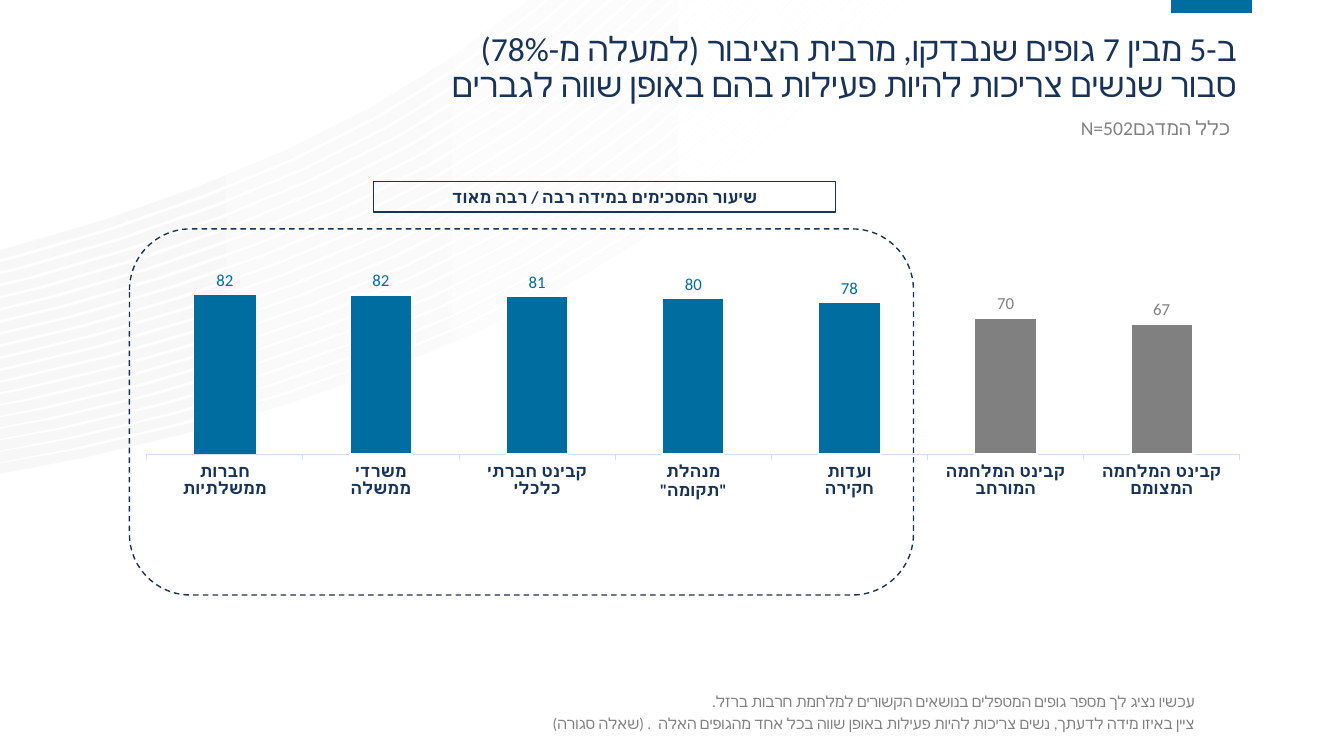
from dataclasses import dataclass

from lxml import etree
from pptx import Presentation
from pptx import util as u
from pptx.chart import data as chart_data
from pptx.dml import color
from pptx.enum import chart as chart_kinds, dml, shapes, text
from pptx.oxml import ns

FONT = "Calibri"
NAVY, BLUE, GRAY, WHITE = "183359", "006DA1", "808080", "FFFFFF"
Point = tuple[float, float]


@dataclass
class Body:
    label: str
    share: int
    highlighted: bool


@dataclass
class Frame:
    kind: shapes.MSO_SHAPE
    left: float
    top: float
    width: float
    height: float
    line_width: float
    dash: dml.MSO_LINE | None = None


BODIES = [
    Body("חברות\nממשלתיות", 82, True),
    Body("משרדי\nממשלה", 82, True),
    Body("קבינט חברתי\nכלכלי", 81, True),
    Body("מנהלת\n\"תקומה\"", 80, True),
    Body("ועדות\nחקירה", 78, True),
    Body("קבינט המלחמה\nהמורחב", 70, False),
    Body("קבינט המלחמה\nהמצומם", 67, False),
]
CAPTION_FRAME = Frame(shapes.MSO_SHAPE.RECTANGLE, 267, 129.5, 330, 22, 0.75)
GROUP_FRAME = Frame(shapes.MSO_SHAPE.ROUNDED_RECTANGLE, 92.5, 163.5, 560, 261.5, 1, dml.MSO_LINE.DASH)

STRIPE_COUNT = 19
STRIPE_STEP = (-7.2, -6.95)
LOWER_EDGE = [(646, 0), (559, 88.5), (494.5, 150.5), (420.5, 201), (337, 238.5),
              (253.5, 276), (160.5, 305.5), (60, 327), (0, 338.5)]
UPPER_EDGE = [(636.5, 0), (554, 84), (490, 145.5), (417, 195), (334, 232.5),
              (251.5, 269.5), (158.5, 299.5), (59, 320.5), (0, 331)]


def rgb(value: str) -> color.RGBColor:
    return color.RGBColor.from_string(value)


def style_font(font, size: float, ink: str, bold: bool = False) -> None:
    font.name, font.size, font.bold = FONT, u.Pt(size), bold
    font.color.rgb = rgb(ink)


def style_line(line, ink: str, width: float) -> None:
    line.color.rgb = rgb(ink)
    line.width = u.Pt(width)


def place(shape, left: float, top: float, width: float, height: float) -> None:
    shape.left, shape.top = u.Pt(left), u.Pt(top)
    shape.width, shape.height = u.Pt(width), u.Pt(height)


def write(frame, words: str, *, size: float, ink: str, bold: bool = False,
          align=text.PP_ALIGN.RIGHT, anchor=text.MSO_ANCHOR.TOP,
          spacing=None, tab: float | None = None) -> None:
    frame.word_wrap = True
    frame.auto_size = text.MSO_AUTO_SIZE.NONE
    frame.vertical_anchor = anchor
    for index, paragraph_words in enumerate(words.split("\n")):
        para = frame.add_paragraph() if index else frame.paragraphs[0]
        properties = para._p.get_or_add_pPr()
        for name, value in (("rtl", "1"), ("marL", "0"), ("indent", "0")):
            properties.set(name, value)
        etree.SubElement(properties, ns.qn("a:buNone"))
        if tab:
            tabs = etree.SubElement(properties, ns.qn("a:tabLst"))
            etree.SubElement(tabs, ns.qn("a:tab"), pos=str(u.Pt(tab)), algn="l")
        para.alignment = align
        para.space_before = u.Pt(0)
        if spacing:
            para.line_spacing = spacing
        for row, row_words in enumerate(paragraph_words.split("\v")):
            if row:
                para.add_line_break()
            span = para.add_run()
            span.text = row_words
            style_font(span.font, size, ink, bold)
            etree.SubElement(span._r.get_or_add_rPr(), ns.qn("a:cs"), typeface=FONT)


def curve(nodes: list[Point], steps: int = 4) -> list[Point]:
    return [
        tuple((1 - t) ** 3 * a + 3 * (1 - t) ** 2 * t * b + 3 * (1 - t) * t ** 2 * c + t ** 3 * d
              for a, b, c, d in zip(*nodes))
        for t in (step / steps for step in range(steps + 1))
    ]


def edge(nodes: list[Point]) -> list[Point]:
    return [nodes[0], *curve(nodes[1:5]), *curve(nodes[4:8])[1:], nodes[8]]


def clip(points: list[Point], axis: int) -> list[Point]:
    kept = []
    for start, end in zip(points[-1:] + points[:-1], points):
        if (start[axis] < 0) != (end[axis] < 0):
            t = start[axis] / (start[axis] - end[axis])
            kept.append(tuple(a + t * (b - a) for a, b in zip(start, end)))
        if end[axis] >= 0:
            kept.append(end)
    return kept


def draw_stripes(page) -> None:
    outline = edge(LOWER_EDGE) + edge(UPPER_EDGE)[::-1]
    builder = None
    for index in range(STRIPE_COUNT):
        shifted = [(x + index * STRIPE_STEP[0], y + index * STRIPE_STEP[1]) for x, y in outline]
        first, *rest = [(u.Pt(x), u.Pt(y)) for x, y in clip(clip(shifted, 0), 1)]
        if builder is None:
            builder = page.shapes.build_freeform(*first)
        else:
            builder.move_to(*first)
        builder.add_line_segments(rest, close=True)
    stripes = builder.convert_to_shape()
    stripes.shadow.inherit = False
    stripes.line.fill.background()
    stripes.fill.gradient()
    stripes.fill.gradient_angle = 0
    for stop, ink, position in zip(stripes.fill.gradient_stops, ("F7F7F7", WHITE), (0, 1)):
        stop.color.rgb = rgb(ink)
        stop.position = position
    stripes._element.getparent().insert(2, stripes._element)


def draw_accent(page) -> None:
    accent = page.shapes.add_connector(
        shapes.MSO_CONNECTOR.STRAIGHT, u.Pt(836.5), u.Pt(4.5), u.Pt(894), u.Pt(4.5))
    style_line(accent.line, BLUE, 10)
    etree.SubElement(accent._element.spPr, ns.qn("a:effectLst"))


def draw_frame(page, item: Frame):
    box = page.shapes.add_shape(
        item.kind, u.Pt(item.left), u.Pt(item.top), u.Pt(item.width), u.Pt(item.height))
    box.shadow.inherit = False
    box.fill.background()
    style_line(box.line, NAVY, item.line_width)
    if item.dash:
        box.line.dash_style = item.dash
    return box


def draw_chart(page) -> None:
    table = chart_data.CategoryChartData()
    table.categories = [body.label for body in BODIES]
    table.add_series("Series 1", [body.share for body in BODIES])
    chart = page.shapes.add_chart(
        chart_kinds.XL_CHART_TYPE.COLUMN_CLUSTERED,
        u.Pt(80), u.Pt(154), u.Pt(828), u.Pt(268), table).chart
    chart.has_legend = chart.has_title = False
    style_font(chart.font, 10, NAVY)
    axis = chart.category_axis
    axis.major_tick_mark = chart_kinds.XL_TICK_MARK.OUTSIDE
    style_font(axis.tick_labels.font, 12, NAVY, True)
    style_line(axis.format.line, "D0DEF2", 0.75)
    scale = chart.value_axis
    scale.minimum_scale, scale.maximum_scale = 0, 100
    scale.has_major_gridlines = scale.visible = False

    plot = chart.plots[0]
    plot.gap_width, plot.vary_by_categories = 150, False
    bars = plot.series[0]
    bars.format.fill.solid()
    bars.format.fill.fore_color.rgb = rgb(GRAY)
    style_line(bars.format.line, WHITE, 1.5)
    labels = bars.data_labels
    labels.show_value = True
    labels.position = chart_kinds.XL_LABEL_POSITION.OUTSIDE_END
    style_font(labels.font, 12, GRAY)
    for index, body in enumerate(BODIES):
        if body.highlighted:
            bar = bars.points[index]
            bar.format.fill.solid()
            bar.format.fill.fore_color.rgb = rgb(BLUE)
            if index:
                style_line(bar.format.line, WHITE, 1.5)
            else:
                bar.format.line.fill.background()
            style_font(bar.data_label.font, 12, BLUE)
            bar.data_label.position = chart_kinds.XL_LABEL_POSITION.OUTSIDE_END

    area = chart._chartSpace.chart.plotArea
    for old in area.findall(ns.qn("c:layout")):
        area.remove(old)
    layout = etree.Element(ns.qn("c:layout"))
    area.insert(0, layout)
    manual = etree.SubElement(layout, ns.qn("c:manualLayout"))
    for name, value in (("layoutTarget", "inner"), ("xMode", "edge"), ("yMode", "edge"),
                        ("x", "0.03"), ("y", "0.117"), ("w", "0.943"), ("h", "0.519")):
        etree.SubElement(manual, ns.qn(f"c:{name}"), val=value)


def main() -> None:
    deck = Presentation()
    deck.slide_width, deck.slide_height = u.Pt(960), u.Pt(540)
    page = deck.slides.add_slide(deck.slide_layouts[1])
    draw_stripes(page)
    draw_accent(page)
    title, note = page.shapes.title, page.placeholders[1]
    place(title, 62.5, 19.5, 828, 56)
    write(title.text_frame, "ב-5 מבין 7 גופים שנבדקו, מרבית הציבור (למעלה מ-78%)\v"
          "סבור שנשים צריכות להיות פעילות בהם באופן שווה לגברים", size=24, ink=NAVY, spacing=0.9)
    place(note, 92, 487.5, 769, 39.5)
    write(note.text_frame, "עכשיו נציג לך מספר גופים המטפלים בנושאים הקשורים למלחמת חרבות ברזל.\n"
          "ציין באיזו מידה לדעתך, נשים צריכות להיות פעילות באופן שווה בכל אחד מהגופים האלה  . (שאלה סגורה)",
          size=11, ink=GRAY, anchor=text.MSO_ANCHOR.MIDDLE, spacing=u.Pt(16))
    draw_chart(page)
    caption = draw_frame(page, CAPTION_FRAME)
    write(caption.text_frame, "שיעור המסכימים במידה רבה / רבה מאוד", size=12, ink=NAVY, bold=True,
          align=text.PP_ALIGN.CENTER, anchor=text.MSO_ANCHOR.MIDDLE)
    draw_frame(page, GROUP_FRAME)
    sample = page.shapes.add_textbox(u.Pt(57.5), u.Pt(81.5), u.Pt(828), u.Pt(56))
    write(sample.text_frame, "כלל המדגם\tN=502", size=14, ink=GRAY, spacing=0.9, tab=84)
    deck.save("out.pptx")


if __name__ == "__main__":
    main()
